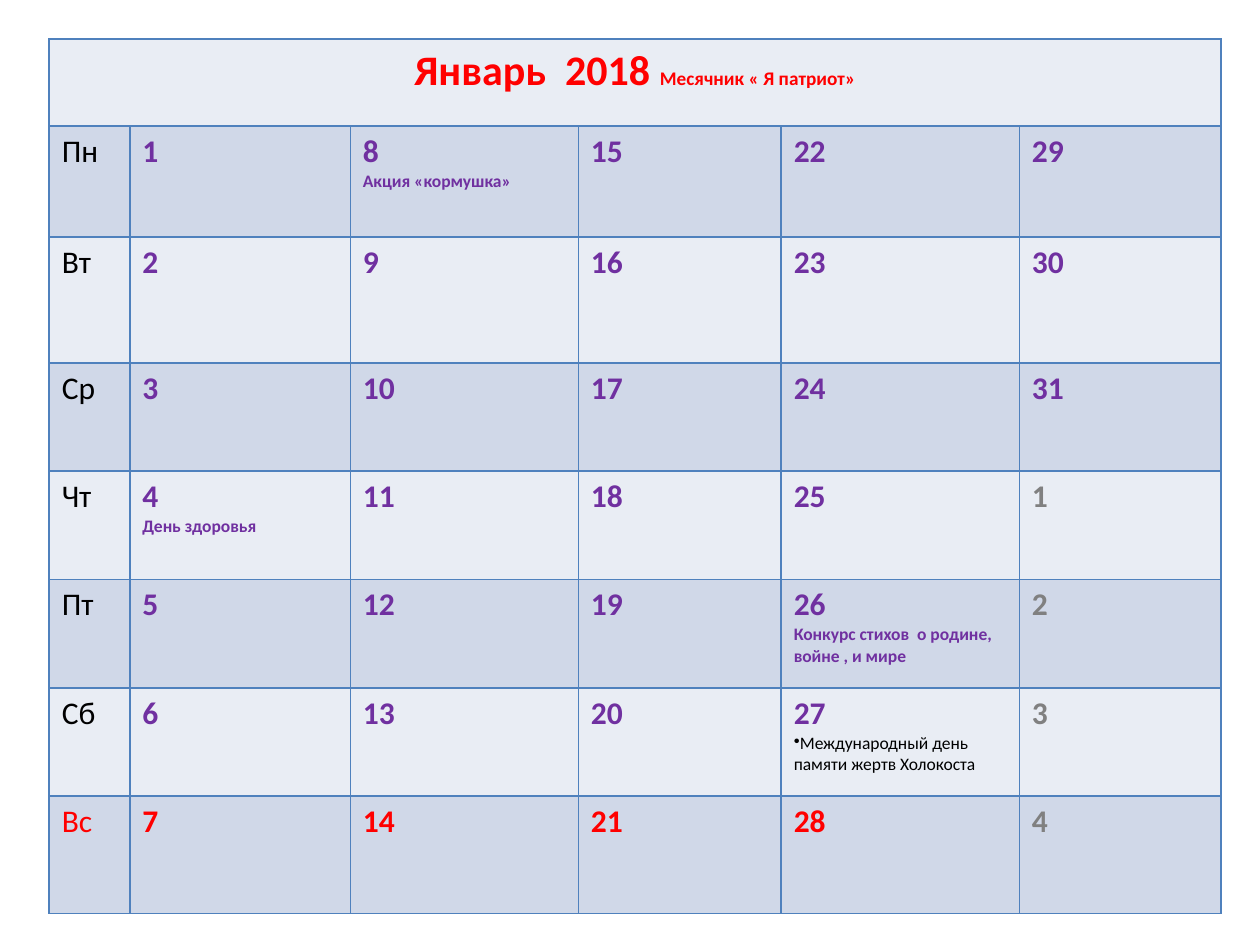
from lxml import etree
from pptx import Presentation
from pptx.dml.color import RGBColor
from pptx.enum.text import PP_ALIGN
from pptx.oxml.ns import qn
from pptx.util import Inches, Pt

CENTER = PP_ALIGN.CENTER
BLANK_LAYOUT = 6
FONT = "Calibri"
BLACK, RED, PURPLE, GRAY = "000000", "FF0000", "7030A0", "808080"
BORDER = "4F81BD"
BANDS = ("E9EDF4", "D0D8E8")
COLUMN_WIDTHS = (0.64, 1.75, 1.81, 1.61, 1.89, 1.6)
ROW_HEIGHTS = (0.69, 0.88, 1, 0.86, 0.86, 0.86, 0.86, 0.93)
WEEKDAYS = ("Пн", "Вт", "Ср", "Чт", "Пт", "Сб", "Вс")
WEEKS = 5
DAYS_IN_MONTH = 31

DAY_NAME = {"size": Pt(18), "bold": False}
DAY_NUMBER = {"size": Pt(18), "bold": True}
EVENT = {"size": Pt(10), "bold": True}
PLAIN_EVENT = {"size": Pt(10), "bold": False}
TITLE = {"size": Pt(24), "bold": True}
SUBTITLE = {"size": Pt(11), "bold": True}

EVENTS = {
    4: "День здоровья",
    8: "Акция «кормушка»",
    26: "Конкурс стихов  о родине, войне , и мире",
}
BULLETED_EVENTS = {27: "Международный день памяти жертв Холокоста"}


def rgb(value):
    return RGBColor.from_string(value)


def add_run(paragraph, text, color, font_format):
    run = paragraph.add_run()
    run.text = text
    run.font.name = FONT
    run.font.color.rgb = rgb(color)
    for attribute, value in font_format.items():
        setattr(run.font, attribute, value)


def add_bullet(paragraph):
    properties = paragraph._p.get_or_add_pPr()
    etree.SubElement(properties, qn("a:buChar"), char="•")


def style_cell(cell, fill_color):
    properties = cell._tc.get_or_add_tcPr()
    for side in ("a:lnL", "a:lnR", "a:lnT", "a:lnB"):
        border = etree.SubElement(properties, qn(side), w=str(Pt(1)))
        solid = etree.SubElement(border, qn("a:solidFill"))
        etree.SubElement(solid, qn("a:srgbClr"), val=BORDER)
    cell.fill.solid()
    cell.fill.fore_color.rgb = rgb(fill_color)


def add_calendar_grid(slide):
    frame = slide.shapes.add_table(
        len(ROW_HEIGHTS), len(COLUMN_WIDTHS),
        Inches(0.39), Inches(0.31),
        Inches(sum(COLUMN_WIDTHS)), Inches(sum(ROW_HEIGHTS)),
    )
    calendar = frame.table
    for column, width in zip(calendar.columns, COLUMN_WIDTHS):
        column.width = Inches(width)
    for index, (row, height) in enumerate(zip(calendar.rows, ROW_HEIGHTS)):
        row.height = Inches(height)
        for cell in row.cells:
            style_cell(cell, BANDS[index % 2])
    return calendar


def fill_header(calendar):
    header = calendar.cell(0, 0)
    header.merge(calendar.cell(0, len(COLUMN_WIDTHS) - 1))
    paragraph = header.text_frame.paragraphs[0]
    paragraph.alignment = CENTER
    add_run(paragraph, "Январь  2018 ", RED, TITLE)
    add_run(paragraph, "Месячник « Я патриот»", RED, SUBTITLE)


def fill_day(cell, day, is_sunday):
    text_frame = cell.text_frame
    in_month = day <= DAYS_IN_MONTH
    color = GRAY if not in_month else RED if is_sunday else PURPLE
    number = day if in_month else day - DAYS_IN_MONTH
    add_run(text_frame.paragraphs[0], str(number), color, DAY_NUMBER)
    if day in EVENTS:
        add_run(text_frame.add_paragraph(), EVENTS[day], color, EVENT)
    if day in BULLETED_EVENTS:
        paragraph = text_frame.add_paragraph()
        add_bullet(paragraph)
        add_run(paragraph, BULLETED_EVENTS[day], BLACK, PLAIN_EVENT)


def fill_days(calendar):
    for row, weekday in enumerate(WEEKDAYS, start=1):
        is_sunday = row == len(WEEKDAYS)
        name = calendar.cell(row, 0).text_frame.paragraphs[0]
        add_run(name, weekday, RED if is_sunday else BLACK, DAY_NAME)
        for week in range(WEEKS):
            day = row + week * len(WEEKDAYS)
            fill_day(calendar.cell(row, week + 1), day, is_sunday)


def main():
    presentation = Presentation()
    presentation.slide_width = Inches(10)
    presentation.slide_height = Inches(7.5)
    slide = presentation.slides.add_slide(presentation.slide_layouts[BLANK_LAYOUT])
    calendar = add_calendar_grid(slide)
    fill_header(calendar)
    fill_days(calendar)
    presentation.save("out.pptx")


if __name__ == "__main__":
    main()
